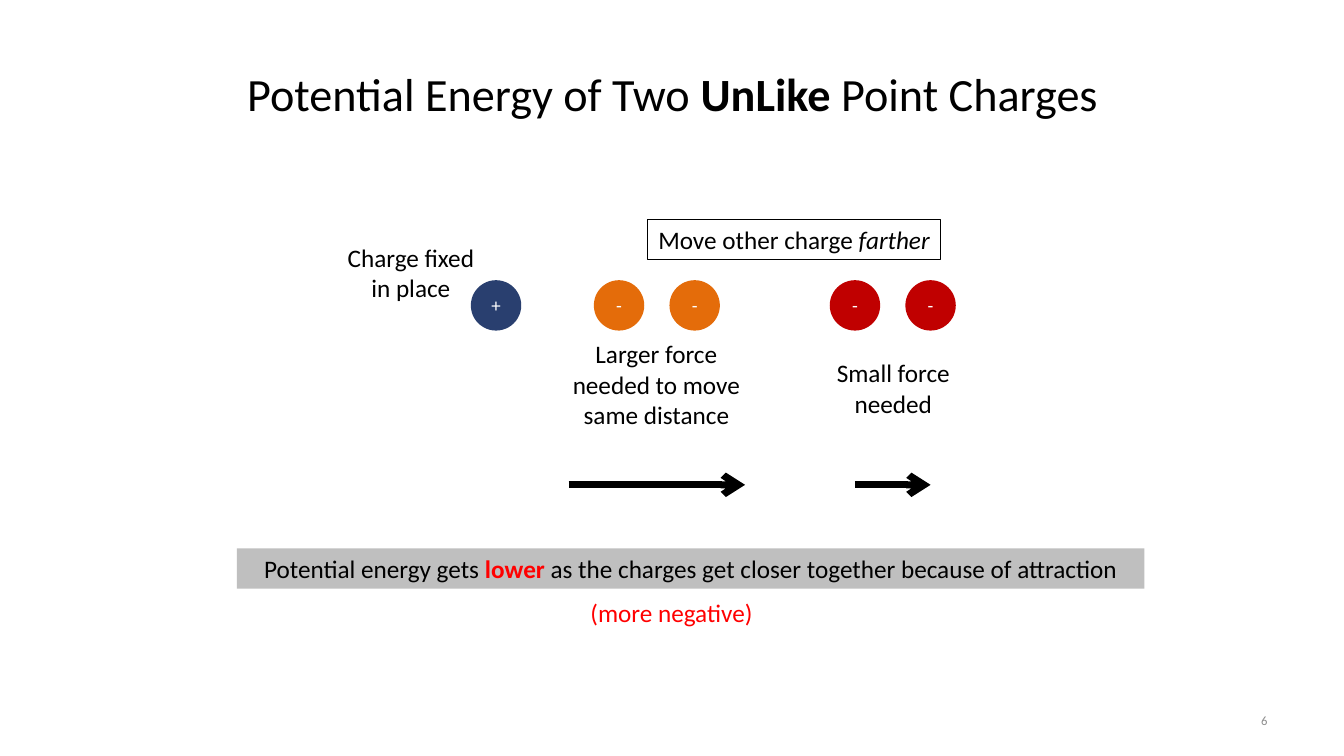
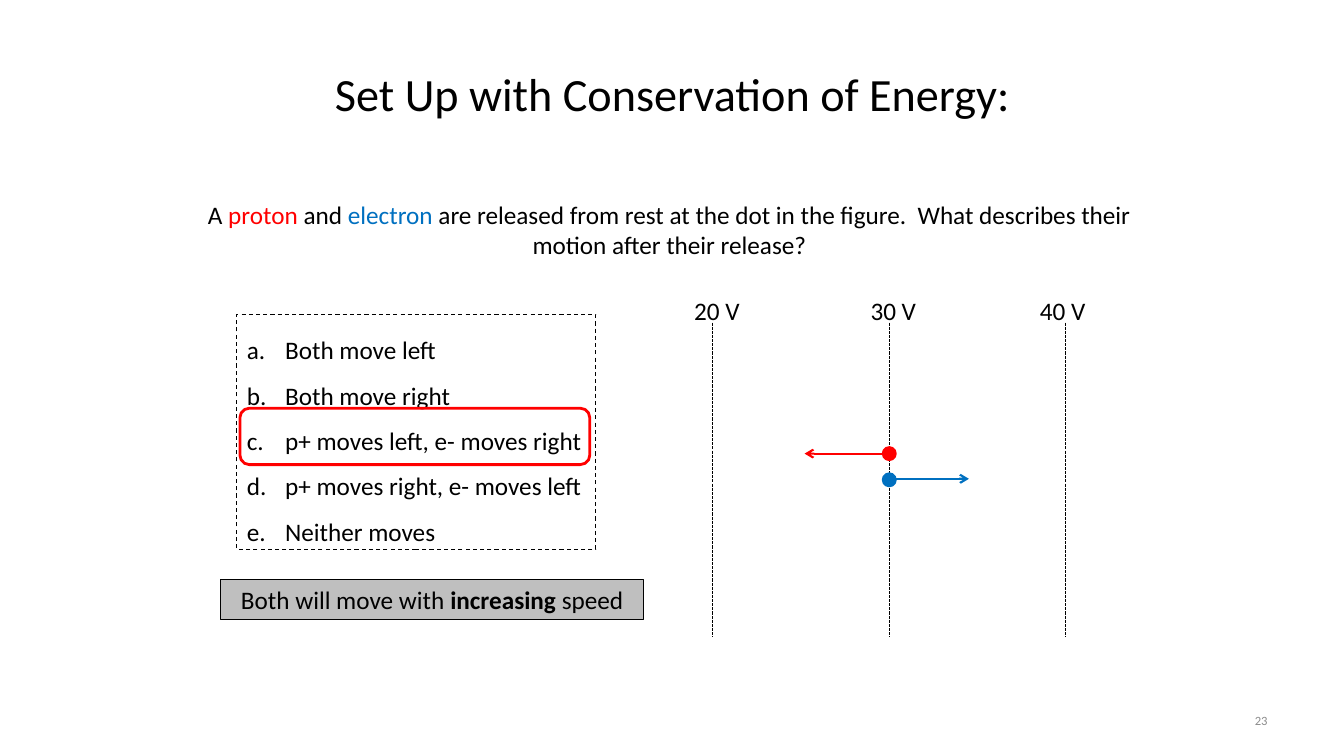
"""Build two physics slides on potential energy and conservation of energy."""
from lxml import etree
from pptx import Presentation
from pptx import util as u
from pptx.dml.color import RGBColor
from pptx.enum import dml, shapes, text
from pptx.oxml import ns

BLACK = RGBColor(0x00, 0x00, 0x00)
WHITE = RGBColor(0xFF, 0xFF, 0xFF)
RED = RGBColor(0xFF, 0x00, 0x00)
BLUE = RGBColor(0x00, 0x70, 0xC0)
NAVY = RGBColor(0x29, 0x3F, 0x6F)
ORANGE = RGBColor(0xE4, 0x6C, 0x0A)
CRIMSON = RGBColor(0xC0, 0x00, 0x00)
SILVER = RGBColor(0xBF, 0xBF, 0xBF)
GRAY = RGBColor(0x8C, 0x8C, 0x8C)

FONT = "Calibri"
BODY_SIZE = 18
CELL = u.Inches(0.5)
TITLE_AREA = (1.34, 0.6, 24, 2.5)
NUMBER_AREA = (19.12, 13.9, 6.22, 0.8)
CENTER, LEFT, RIGHT = text.PP_ALIGN.CENTER, text.PP_ALIGN.LEFT, text.PP_ALIGN.RIGHT
MIDDLE = text.MSO_ANCHOR.MIDDLE
ELLIPSE = shapes.MSO_SHAPE.OVAL

CHARGES_TITLE = ["Potential Energy of Two ", ("UnLike", {"bold": True}), " Point Charges"]
CHARGE_ROW = 5.56
CHARGE_STEP = 1.5
CHARGE_GROUPS = [("+", 9.34, 1, NAVY), ("-", 11.78, 2, ORANGE), ("-", 16.46, 2, CRIMSON)]
CHARGE_LABELS = [
    ("Charge fixed in place", (6.46, 4.7, 3.38, 1.42)),
    ("Larger force needed to move same distance", (11.08, 6.62, 3.88, 2.02)),
    ("Small force needed", (16.34, 7, 2.76, 1.42)),
]
MOVE_LABEL = ["Move other charge ", ("farther", {"italic": True})]
FORCE_ROW = 9.62
FORCE_ARROWS = [(11.28, 3.5), (16.96, 1.5)]
ENERGY_BAND = [
    "Potential energy gets ",
    ("lower ", {"bold": True, "color": RED}),
    "as the charges get closer together because of attraction",
]

QUESTION = [
    "A ", ("proton", {"color": RED}), " and ", ("electron", {"color": BLUE}),
    " are released from rest at the dot in the figure.  "
    "What describes their motion after their release?",
]
OPTIONS = [
    "Both move left",
    "Both move right",
    "p+ moves left, e- moves right",
    "p+ moves right, e- moves left",
    "Neither moves",
]
SPEED_BAND = ["Both will move with ", ("increasing", {"bold": True}), " speed"]
FIRST_LINE, LINE_STEP, LINE_TOP, LINE_BOTTOM = 14.14, 3.5, 6.4, 12.64
VOLTAGES = [("20 V", 13.28), ("30 V", 16.78), ("40 V", 20.14)]
DOT = 0.24
PARTICLES = [
    {"color": BLUE, "row": 9.52, "arrow_row": 9.5, "start": 17.66, "end": 19.22},
    {"color": RED, "row": 9, "arrow_row": 9, "start": 17.52, "end": 15.96},
]


def cells(*lengths):
    return [round(length * CELL) for length in lengths]


def paint(shape, fill=None, line=None, width=0.75, dash=None):
    if fill is None:
        shape.fill.background()
    else:
        shape.fill.solid()
        shape.fill.fore_color.rgb = fill
    if line is None:
        shape.line.fill.background()
    else:
        shape.line.color.rgb = line
        shape.line.width = u.Pt(width)
        if dash is not None:
            shape.line.dash_style = dash


def format_span(span, size, color, bold=False, italic=False):
    font = span.font
    font.name, font.size, font.bold, font.italic = FONT, u.Pt(size), bold, italic
    font.color.rgb = color


def write(para, spans, size=BODY_SIZE, color=BLACK, align=CENTER):
    para.alignment = align
    for part in [spans] if isinstance(spans, str) else spans:
        words, style = (part, {}) if isinstance(part, str) else part
        span = para.add_run()
        span.text = words
        format_span(span, size, **{"color": color, **style})


def add_text(page, area, spans, anchor=text.MSO_ANCHOR.TOP, wrap=True, **style):
    box = page.shapes.add_textbox(*cells(*area))
    frame = box.text_frame
    frame.word_wrap = wrap
    frame.vertical_anchor = anchor
    write(frame.paragraphs[0], spans, **style)
    return box


def add_shape(page, kind, area, **style):
    shape = page.shapes.add_shape(kind, *cells(*area))
    shape.shadow.inherit = False
    paint(shape, **style)
    return shape


def add_line(page, start, end, color=BLACK, width=0.75, dash=None, arrow=False):
    line = page.shapes.add_connector(shapes.MSO_CONNECTOR.STRAIGHT, *cells(*start, *end))
    line.line.color.rgb = color
    line.line.width = u.Pt(width)
    if dash is not None:
        line.line.dash_style = dash
    properties = line.element.spPr
    if arrow:
        outline = properties.find(ns.qn("a:ln"))
        etree.SubElement(outline, ns.qn("a:tailEnd"), type="arrow")
    etree.SubElement(properties, ns.qn("a:effectLst"))


def add_page(deck, title, number):
    page = deck.slides.add_slide(deck.slide_layouts[6])
    add_text(page, TITLE_AREA, title, anchor=MIDDLE, size=33)
    add_text(page, NUMBER_AREA, number, anchor=MIDDLE, size=9, color=GRAY, align=RIGHT)
    return page


def add_options(page, area):
    box = add_text(page, area, OPTIONS[0], align=LEFT)
    paint(box, line=BLACK, dash=dml.MSO_LINE.DASH)
    frame = box.text_frame
    for option in OPTIONS[1:]:
        write(frame.add_paragraph(), option, align=LEFT)
    for para in frame.paragraphs:
        para.line_spacing = 1.5
        properties = para._p.get_or_add_pPr()
        indent = u.Inches(0.38)
        properties.set("marL", str(indent))
        properties.set("indent", str(-indent))
        etree.SubElement(properties, ns.qn("a:buAutoNum"), type="alphaLcPeriod")


def build_charges(deck):
    page = add_page(deck, CHARGES_TITLE, "6")
    for sign, left, count, color in CHARGE_GROUPS:
        for index in range(count):
            area = (left + index * CHARGE_STEP, CHARGE_ROW, 1, 1)
            charge = add_shape(page, ELLIPSE, area, fill=color)
            charge.text_frame.vertical_anchor = MIDDLE
            write(charge.text_frame.paragraphs[0], sign, size=13.5, color=WHITE)
    for label, area in CHARGE_LABELS:
        add_text(page, area, label)
    paint(add_text(page, (12.84, 4.36, 5.82, 0.8), MOVE_LABEL, wrap=False), line=BLACK)
    for left, length in FORCE_ARROWS:
        add_line(page, (left, FORCE_ROW), (left + length, FORCE_ROW), width=5, arrow=True)
    paint(add_text(page, (4.7, 10.88, 18, 0.8), ENERGY_BAND), fill=SILVER)
    add_text(page, (11.2, 11.76, 4.24, 0.8), "(more negative)", color=RED)


def build_conservation(deck):
    page = add_page(deck, "Set Up with Conservation of Energy:", "23")
    add_text(page, (3.84, 3.86, 18.88, 1.42), QUESTION)
    add_options(page, (4.7, 6.24, 7.12, 4.66))
    add_shape(page, shapes.MSO_SHAPE.ROUNDED_RECTANGLE, (4.76, 8.1, 6.94, 1.12),
              line=RED, width=2)
    paint(add_text(page, (4.38, 11.5, 8.38, 0.8), SPEED_BAND), fill=SILVER, line=BLACK)
    for index, (voltage, left) in enumerate(VOLTAGES):
        column = FIRST_LINE + index * LINE_STEP
        add_line(page, (column, LINE_TOP), (column, LINE_BOTTOM),
                 dash=dml.MSO_LINE.SQUARE_DOT)
        add_text(page, (left, 5.76, 1.88, 0.8), voltage)
    release = FIRST_LINE + LINE_STEP
    for particle in PARTICLES:
        color, row = particle["color"], particle["arrow_row"]
        area = (release - DOT / 2, particle["row"] - DOT / 2, DOT, DOT)
        add_shape(page, ELLIPSE, area, fill=color, line=color, width=2)
        add_line(page, (particle["start"], row), (particle["end"], row),
                 color=color, width=1.5, arrow=True)


def main():
    deck = Presentation()
    deck.slide_width, deck.slide_height = u.Inches(13.33), u.Inches(7.5)
    build_charges(deck)
    build_conservation(deck)
    deck.save("out.pptx")


if __name__ == "__main__":
    main()
